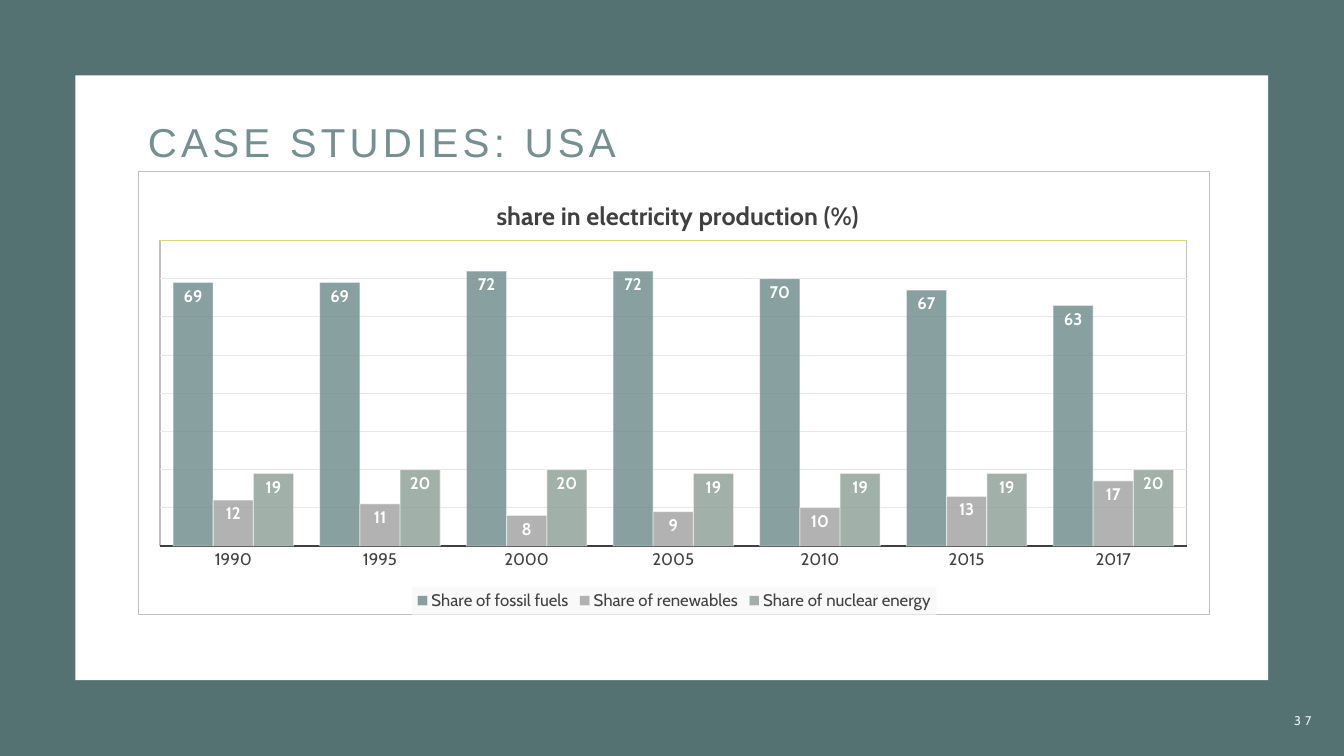
from dataclasses import dataclass

from pptx import Presentation
from pptx.chart.chart import Chart
from pptx.chart.data import CategoryChartData
from pptx.dml.color import RGBColor as Rgb
from pptx.enum.chart import XL_CHART_TYPE as ChartType
from pptx.enum.chart import XL_LABEL_POSITION as LabelPosition
from pptx.enum.chart import XL_LEGEND_POSITION as LegendPosition
from pptx.enum.chart import XL_TICK_LABEL_POSITION as TickLabels
from pptx.enum.chart import XL_TICK_MARK as TickMark
from pptx.enum.shapes import MSO_CONNECTOR as Connector
from pptx.enum.shapes import MSO_SHAPE as Shape
from pptx.enum.text import MSO_ANCHOR as Anchor
from pptx.enum.text import PP_ALIGN as Align
from pptx.oxml import parse_xml
from pptx.oxml.ns import nsdecls
from pptx.oxml.xmlchemy import BaseOxmlElement as Element
from pptx.slide import Slide
from pptx.util import Cm, Pt


@dataclass(frozen=True)
class Theme:
    frame: str = "557272"
    paper: str = "FFFFFF"
    heading: str = "749090"
    page_number: str = "EEF2F0"
    ink: str = "404040"
    border: str = "BFBFBF"
    grid: str = "E7E7E7"
    top_line: str = "DDD96A"
    legend_back: str = "F9F9F9"
    heading_font: str = "Arial"
    body_font: str = "Cabin"
    heading_size: float = 28.8
    chart_title_size: float = 18
    chart_size: float = 12
    number_size: float = 9


@dataclass(frozen=True)
class Area:
    left: float
    top: float
    width: float
    height: float

    def lengths(self) -> tuple[Cm, Cm, Cm, Cm]:
        return Cm(self.left), Cm(self.top), Cm(self.width), Cm(self.height)


@dataclass(frozen=True)
class Panel:
    area: Area
    color: str


@dataclass(frozen=True)
class Label:
    text: str
    area: Area
    font: str
    size: float
    color: str
    align: Align = Align.LEFT
    line_spacing: float = 1.0
    space_after: float = 0


@dataclass(frozen=True)
class EnergyShare:
    name: str
    values: tuple[int, ...]
    color: str


THEME = Theme()
SLIDE = Area(0, 0, 33.87, 19.05)
CHART = Area(3.48, 4.32, 27.02, 11.18)
PLOT = Area(0.02, 0.155, 0.9585, 0.69)
PANELS = (
    Panel(SLIDE, THEME.frame),
    Panel(Area(1.9, 1.9, 30.06, 15.24), THEME.paper),
)
LABELS = (
    Label("CASE STUDIES: USA", Area(3.48, 2.97, 26.7, 1.32), THEME.heading_font,
          THEME.heading_size, THEME.heading, line_spacing=0.9),
    Label("37", Area(30.89, 17.65, 2.41, 1.02), THEME.body_font,
          THEME.number_size, THEME.page_number, Align.RIGHT, space_after=6),
)
YEARS = ("1990", "1995", "2000", "2005", "2010", "2015", "2017")
SHARES = (
    EnergyShare("Share of fossil fuels", (69, 69, 72, 72, 70, 67, 63), "749090"),
    EnergyShare("Share of renewables", (12, 11, 8, 9, 10, 13, 17), "A5A5A5"),
    EnergyShare("Share of nuclear energy", (19, 20, 20, 19, 19, 19, 20), "91A39B"),
)


def rgb(color: str) -> Rgb:
    return Rgb.from_string(color)


def add_panel(page: Slide, panel: Panel) -> None:
    box = page.shapes.add_shape(Shape.RECTANGLE, *panel.area.lengths())
    box.shadow.inherit = False
    box.fill.solid()
    box.fill.fore_color.rgb = rgb(panel.color)
    box.line.fill.background()


def style_font(font, size: float, color: str, bold: bool = False,
               name: str = THEME.body_font) -> None:
    font.name = name
    font.size = Pt(size)
    font.bold = bold
    font.color.rgb = rgb(color)


def add_label(page: Slide, label: Label) -> None:
    frame = page.shapes.add_textbox(*label.area.lengths()).text_frame
    frame.word_wrap = True
    frame.vertical_anchor = Anchor.MIDDLE
    frame.text = label.text
    para = frame.paragraphs[0]
    para.alignment = label.align
    para.line_spacing = label.line_spacing
    para.space_after = Pt(label.space_after)
    span = para.runs[0]
    style_font(span.font, label.size, label.color, name=label.font)
    span.font._element.set("spc", "300")


def outline(color: str, fill: str = "") -> Element:
    inside = f'<a:solidFill><a:srgbClr val="{fill}"/></a:solidFill>' if fill else "<a:noFill/>"
    edge = f'<a:solidFill><a:srgbClr val="{color}"/></a:solidFill>' if color else "<a:noFill/>"
    return parse_xml(f'<c:spPr {nsdecls("c", "a")}>{inside}<a:ln w="9525">{edge}</a:ln></c:spPr>')


def place(parent: Element, index: int, left: float, top: float, size: str = "") -> None:
    for old in parent.xpath("c:layout"):
        parent.remove(old)
    target = '<c:layoutTarget val="inner"/>' if size else ""
    parent.insert(index, parse_xml(
        f'<c:layout {nsdecls("c")}><c:manualLayout>{target}'
        f'<c:xMode val="edge"/><c:yMode val="edge"/>'
        f'<c:x val="{left}"/><c:y val="{top}"/>{size}</c:manualLayout></c:layout>'))


def set_opacity(color: Element, percent: int) -> None:
    color.append(parse_xml(f'<a:alpha {nsdecls("a")} val="{percent * 1000}"/>'))


def style_series(chart: Chart) -> None:
    plot = chart.plots[0]
    plot.gap_width = 65
    plot.overlap = 0
    plot.vary_by_categories = False
    for series, share in zip(plot.series, SHARES):
        series.format.fill.solid()
        series.format.fill.fore_color.rgb = rgb(share.color)
        series.format.line.color.rgb = rgb(THEME.paper)
        series.format.line.width = Pt(0.75)
        set_opacity(series._element.xpath("c:spPr/a:solidFill/a:srgbClr")[0], 85)
        set_opacity(series._element.xpath("c:spPr/a:ln/a:solidFill/a:srgbClr")[0], 50)
        labels = series.data_labels
        labels.show_value = True
        labels.position = LabelPosition.INSIDE_END
        style_font(labels.font, THEME.chart_size, THEME.paper, bold=True)


def style_axes(chart: Chart) -> None:
    years = chart.category_axis
    years.major_tick_mark = TickMark.NONE
    years.minor_tick_mark = TickMark.NONE
    years.tick_label_position = TickLabels.NEXT_TO_AXIS
    years.format.line.color.rgb = rgb(THEME.ink)
    years.format.line.width = Pt(1.5)
    style_font(years.tick_labels.font, THEME.chart_size, THEME.ink)
    scale = chart.value_axis
    scale.minimum_scale, scale.maximum_scale, scale.major_unit = 0, 80, 10
    scale.visible = False
    scale.has_major_gridlines = True
    scale.major_gridlines.format.line.color.rgb = rgb(THEME.grid)
    scale.major_gridlines.format.line.width = Pt(0.75)


def add_share_chart(page: Slide) -> None:
    data = CategoryChartData()
    data.categories = YEARS
    for share in SHARES:
        data.add_series(share.name, share.values)
    chart = page.shapes.add_chart(ChartType.COLUMN_CLUSTERED, *CHART.lengths(), data).chart
    style_font(chart.font, THEME.chart_size, THEME.ink)
    style_series(chart)
    style_axes(chart)

    chart.has_title = True
    chart.chart_title.text_frame.text = "share in electricity production (%)"
    span = chart.chart_title.text_frame.paragraphs[0].runs[0]
    style_font(span.font, THEME.chart_title_size, THEME.ink, bold=True)
    place(chart.chart_title._element, 1, 0.33, 0.05)

    chart.has_legend = True
    chart.legend.position = LegendPosition.BOTTOM
    chart.legend.include_in_layout = False
    style_font(chart.legend.font, THEME.chart_size, THEME.ink)
    chart.legend._element.xpath("c:txPr")[0].addprevious(outline("", THEME.legend_back))

    space = chart._chartSpace
    plot_area = space.xpath("c:chart/c:plotArea")[0]
    place(plot_area, 0, PLOT.left, PLOT.top,
          f'<c:w val="{PLOT.width}"/><c:h val="{PLOT.height}"/>')
    plot_area.append(outline(THEME.border))
    space.xpath("c:chart")[0].addnext(outline(THEME.border, THEME.paper))


def add_top_line(page: Slide) -> None:
    left = CHART.left + PLOT.left * CHART.width
    top = Cm(CHART.top + PLOT.top * CHART.height)
    line = page.shapes.add_connector(
        Connector.STRAIGHT, Cm(left), top, Cm(left + PLOT.width * CHART.width), top)
    line.line.color.rgb = rgb(THEME.top_line)
    line.line.width = Pt(0.75)
    line._element.spPr.append(parse_xml(f'<a:effectLst {nsdecls("a")}/>'))


def main() -> None:
    deck = Presentation()
    deck.slide_width, deck.slide_height = Cm(SLIDE.width), Cm(SLIDE.height)
    page = deck.slides.add_slide(deck.slide_layouts[6])
    for panel in PANELS:
        add_panel(page, panel)
    for label in LABELS:
        add_label(page, label)
    add_share_chart(page)
    add_top_line(page)
    deck.save("out.pptx")


if __name__ == "__main__":
    main()
